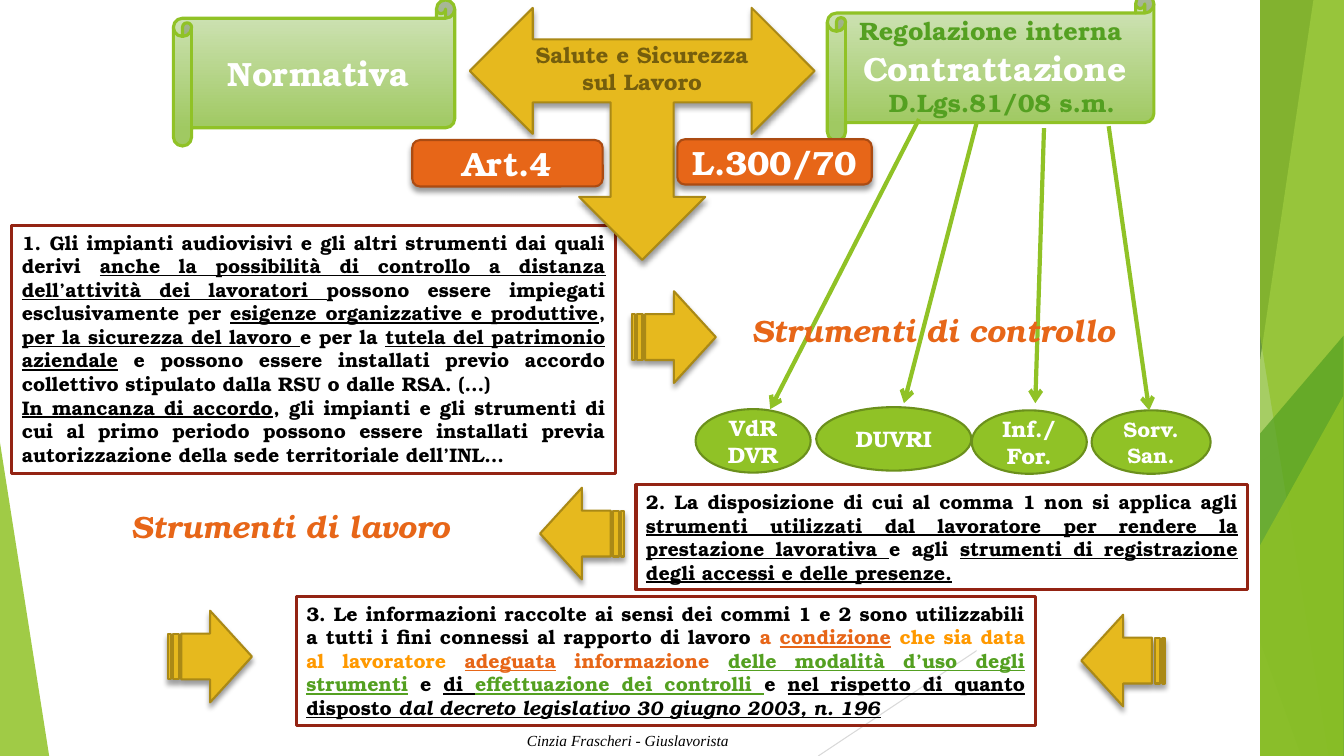
from lxml.etree import SubElement
from pptx import Presentation
from pptx.dml.color import RGBColor
from pptx.enum.shapes import MSO_CONNECTOR, MSO_SHAPE
from pptx.enum.text import MSO_ANCHOR, PP_ALIGN
from pptx.oxml.ns import qn
from pptx.util import Cm, Pt

WHITE, BLACK = RGBColor(255, 255, 255), RGBColor(0, 0, 0)
GREEN, DARK_GREEN = RGBColor(0x90, 0xC2, 0x26), RGBColor(0x6B, 0x90, 0x1C)
LEAF, FOREST, LIME = RGBColor(0x54, 0xA0, 0x21), RGBColor(0x3F, 0x78, 0x19), RGBColor(0xC0, 0xE4, 0x74)
PALE, MEADOW = RGBColor(0xD3, 0xE5, 0xBE), RGBColor(0xA0, 0xC9, 0x62)
ORANGE, RUST, AMBER = RGBColor(0xE7, 0x66, 0x18), RGBColor(0xAB, 0x4B, 0x12), RGBColor(0xFF, 0x99, 0)
GOLD, DARK_GOLD, BROWN = RGBColor(0xE6, 0xB9, 0x1E), RGBColor(0xAA, 0x89, 0x16), RGBColor(0x75, 0x5E, 0x0D)
RED, GREY = RGBColor(0x93, 0x23, 0x13), RGBColor(0xD9, 0xD9, 0xD9)
SERIF, TIMES = "TeX Gyre Bonum", "Times New Roman"
WIDTH, HEIGHT = 33.87, 19.05

# Content; lengths in centimetres, frames as left, top, width, height
# Background bands: top x, bottom x, colour, opacity; all reach the right edge
BANDS = [(31.19, 25.5, GREEN, 30), (26.67, 30.05, GREEN, 20), (25.93, 32.79, FOREST, 70),
         (33.1, 30.28, LIME, 70), (30.38, 33.48, GREEN, 65)]
# Background triangles: frame, apex position, colour, opacity
TRIANGLES = [((24.82, 8.46, 9.04, 10.59), 1, LEAF, 72),
             ((28.8, 9.98, 5.05, 9.07), 1, GREEN, 80),
             ((0, 11.15, 1.24, 7.9), 0, GREEN, 85)]
WHITE_PANEL = (24.61, 0, 7.14, HEIGHT)

# Law boxes: frame, paragraphs of (text, style letters, colour)
LAW_BOXES = [
    ((0.3, 5.69, 15.21, 6.25), [
        [("1. Gli impianti audiovisivi e gli altri strumenti dai quali derivi ", "", BLACK),
         ("anche la possibilità di controllo a distanza dell’attività dei lavoratori ", "u", BLACK),
         ("possono essere impiegati esclusivamente per ", "", BLACK),
         ("esigenze organizzative e produttive", "u", BLACK),
         (", ", "", BLACK),
         ("per la sicurezza del lavoro ", "u", BLACK),
         ("e per la ", "", BLACK),
         ("tutela del patrimonio aziendale", "u", BLACK),
         (" e possono essere installati previo accordo collettivo stipulato dalla RSU "
          "o dalle RSA. (…)", "", BLACK)],
        [("In mancanza di accordo", "u", BLACK),
         (", gli impianti e gli strumenti di cui al primo periodo possono essere installati "
          "previa autorizzazione della sede territoriale dell’INL…", "", BLACK)]]),
    ((16.03, 12.22, 15.42, 2.64), [
        [("2. La disposizione di cui al comma 1 non si applica agli ", "", BLACK),
         ("strumenti utilizzati dal lavoratore per rendere la prestazione lavorativa ", "u", BLACK),
         ("e agli ", "", BLACK),
         ("strumenti di registrazione degli accessi e delle presenze.", "u", BLACK)]]),
    ((7.47, 15.04, 18.62, 3.25), [
        [("3. Le informazioni raccolte ai sensi dei commi 1 e 2 sono utilizzabili a tutti i fini "
          "connessi al rapporto di lavoro ", "", BLACK),
         ("a ", "", ORANGE),
         ("condizione", "u", ORANGE),
         (" ", "", ORANGE),
         ("che sia data al lavoratore ", "", AMBER),
         ("adeguata", "u", ORANGE),
         (" informazione ", "", ORANGE),
         ("delle modalità d’uso degli strumenti", "u", LEAF),
         (" ", "", LEAF),
         ("e ", "", BLACK),
         ("di ", "u", BLACK),
         ("effettuazione dei controlli ", "u", LEAF),
         ("e ", "", BLACK),
         ("nel rispetto di quanto disposto ", "u", BLACK),
         ("dal decreto legislativo 30 giugno 2003, n. 196", "ui", BLACK)]]),
]

THREE_WAY_ARROW = (11.84, 0.2, 8.69, 6.35)
SCROLLS = [("Normativa", (4.37, 0, 7.09, 3.68)), ("Contrattazione", (20.85, -0.13, 8.23, 3.68))]
TAGS = [("Art.4", (10.39, 3.53, 4.8, 1.17)), ("L.300/70", (17.07, 3.51, 4.9, 1.14))]
# Striped arrows: left, top, rotation
STRIPED_ARROWS = [(13.61, 12.29, 180), (15.93, 7.34, 0), (27.25, 15.49, 180), (4.24, 15.39, 0)]
STRIPED_SIZE = (2.11, 2.31)
# Documents: text, left, top, width, text size, arrow start, arrow end
DOCUMENTS = [
    ("VdR\vDVR", 17.53, 10.31, 2.9, 16, (23.16, 3), (19.41, 10.31)),
    ("DUVRI", 20.57, 10.26, 3.91, 16, (24.61, 3.1), (22.78, 10.16)),
    ("Inf./For.", 24.49, 10.34, 2.9, 16, (26.31, 3.23), (26.09, 10.16)),
    ("Sorv. San.", 27.51, 10.34, 3, 15, (27.94, 3.18), (28.96, 10.34)),
]
# Labels: text, frame, size, colour, style letters, alignment, font
LABELS = [
    ("Salute e Sicurezza\nsul Lavoro", (12.45, 0.91, 7.47, 1.63), 16, BROWN, "b", PP_ALIGN.CENTER, SERIF),
    ("Regolazione interna", (21.41, 0.25, 7.6, 1.02), 18, LEAF, "b", PP_ALIGN.LEFT, SERIF),
    ("D.Lgs.81/08 s.m.", (22.15, 2.08, 6.6, 1.02), 18, LEAF, "b", PP_ALIGN.LEFT, SERIF),
    ("Strumenti di lavoro", (3.05, 12.67, 10.85, 1.19), 22, ORANGE, "bi", PP_ALIGN.LEFT, SERIF),
    ("Strumenti di controllo", (18.69, 7.72, 10.85, 1.19), 22, ORANGE, "bi", PP_ALIGN.LEFT, SERIF),
    ("Cinzia Frascheri - Giuslavorista", (13.03, 18.31, 6, 0.74), 11, BLACK, "i", PP_ALIGN.LEFT, TIMES),
]

deck = Presentation()
deck.slide_width, deck.slide_height = Cm(WIDTH), Cm(HEIGHT)
page = deck.slides.add_slide(deck.slide_layouts[6])


def paint(shape, fill=None, line=None, weight=1.5, opacity=100, shadow=False):
    shape.shadow.inherit = False
    if fill is None:
        shape.fill.background()
    else:
        shape.fill.solid()
        shape.fill.fore_color.rgb = fill
    if line is None:
        shape.line.fill.background()
    else:
        shape.line.color.rgb = line
        shape.line.width = Pt(weight)
    properties = shape._element.spPr
    if opacity < 100:
        color = properties.find(qn("a:solidFill")).find(qn("a:srgbClr"))
        SubElement(color, qn("a:alpha"), val=str(opacity * 1000))
    if shadow:
        outer = SubElement(properties.find(qn("a:effectLst")), qn("a:outerShdw"), blurRad=str(Pt(4)),
                           dist=str(Pt(3)), dir="5400000", rotWithShape="0")
        color = SubElement(outer, qn("a:srgbClr"), val=str(BLACK))
        SubElement(color, qn("a:alpha"), val="40000")


def add_preset(kind, frame, **look):
    shape = page.shapes.add_shape(kind, *map(Cm, frame))
    paint(shape, **look)
    return shape


def add_line(start, end, color, weight, arrow=False):
    line = page.shapes.add_connector(MSO_CONNECTOR.STRAIGHT, *map(Cm, start + end))
    line.line.color.rgb = color
    line.line.width = Pt(weight)
    properties = line._element.spPr
    if arrow:
        SubElement(properties.find(qn("a:ln")), qn("a:tailEnd"), type="arrow")
    SubElement(properties, qn("a:effectLst"))


def style_span(span, size, color, style="b", font=SERIF):
    span.font.name, span.font.size = font, Pt(size)
    span.font.color.rgb = color
    span.font.bold, span.font.italic, span.font.underline = (letter in style for letter in "biu")


def write(shape, text, size, color=WHITE, style="b", align=PP_ALIGN.CENTER, font=SERIF,
          anchor=MSO_ANCHOR.MIDDLE):
    frame = shape.text_frame
    frame.word_wrap = True
    frame.vertical_anchor = anchor
    frame.text = text
    for para in frame.paragraphs:
        para.alignment = align
        for span in para.runs:
            style_span(span, size, color, style, font)


# Background
add_line((WIDTH, 10.24), (20.62, HEIGHT), GREY, 0.75)
for top_x, bottom_x, color, opacity in BANDS:
    outline = page.shapes.build_freeform(Cm(top_x), 0)
    outline.add_line_segments([(Cm(WIDTH), 0), (Cm(WIDTH), Cm(HEIGHT)), (Cm(bottom_x), Cm(HEIGHT))])
    paint(outline.convert_to_shape(), fill=color, opacity=opacity)
for frame, apex, color, opacity in TRIANGLES:
    triangle = add_preset(MSO_SHAPE.ISOSCELES_TRIANGLE, frame, fill=color, opacity=opacity)
    triangle.adjustments[0] = apex
add_preset(MSO_SHAPE.RECTANGLE, WHITE_PANEL, fill=WHITE)

# Law boxes
for frame, paragraphs in LAW_BOXES:
    box = add_preset(MSO_SHAPE.RECTANGLE, frame, line=RED, weight=2.25)
    box.text_frame.word_wrap = True
    box.text_frame.vertical_anchor = MSO_ANCHOR.TOP
    for index, spans in enumerate(paragraphs):
        para = box.text_frame.add_paragraph() if index else box.text_frame.paragraphs[0]
        para.alignment = PP_ALIGN.JUSTIFY
        for text, style, color in spans:
            span = para.add_run()
            span.text = text
            style_span(span, 14, color, "b" + style)

# Block arrows
gold_look = {"fill": GOLD, "line": DARK_GOLD, "shadow": True}
three_way = add_preset(MSO_SHAPE.LEFT_RIGHT_UP_ARROW, THREE_WAY_ARROW, **gold_look)
three_way._element.spPr.find(qn("a:xfrm")).set("flipV", "1")
for left, top, rotation in STRIPED_ARROWS:
    arrow = add_preset(MSO_SHAPE.STRIPED_RIGHT_ARROW, (left, top, *STRIPED_SIZE), **gold_look)
    arrow.rotation = rotation

# Scrolls and tags
for text, frame in SCROLLS:
    scroll = add_preset(MSO_SHAPE.HORIZONTAL_SCROLL, frame, line=GREEN, weight=2.25)
    scroll.fill.gradient()
    scroll.fill.gradient_angle = 270
    for stop, color, position in zip(scroll.fill.gradient_stops, (PALE, MEADOW), (0, 0.88)):
        stop.color.rgb = color
        stop.position = position
    write(scroll, text, 24)
for text, frame in TAGS:
    write(add_preset(MSO_SHAPE.ROUNDED_RECTANGLE, frame, fill=ORANGE, line=RUST, shadow=True), text, 24)

# Documents and the arrows to them
for text, left, top, width, size, start, end in DOCUMENTS:
    write(add_preset(MSO_SHAPE.OVAL, (left, top, width, 1.6), fill=GREEN, line=DARK_GREEN), text, size)
    add_line(start, end, GREEN, 3, arrow=True)

# Labels
for text, frame, *look in LABELS:
    write(page.shapes.add_textbox(*map(Cm, frame)), text, *look, anchor=MSO_ANCHOR.TOP)

deck.save("out.pptx")
